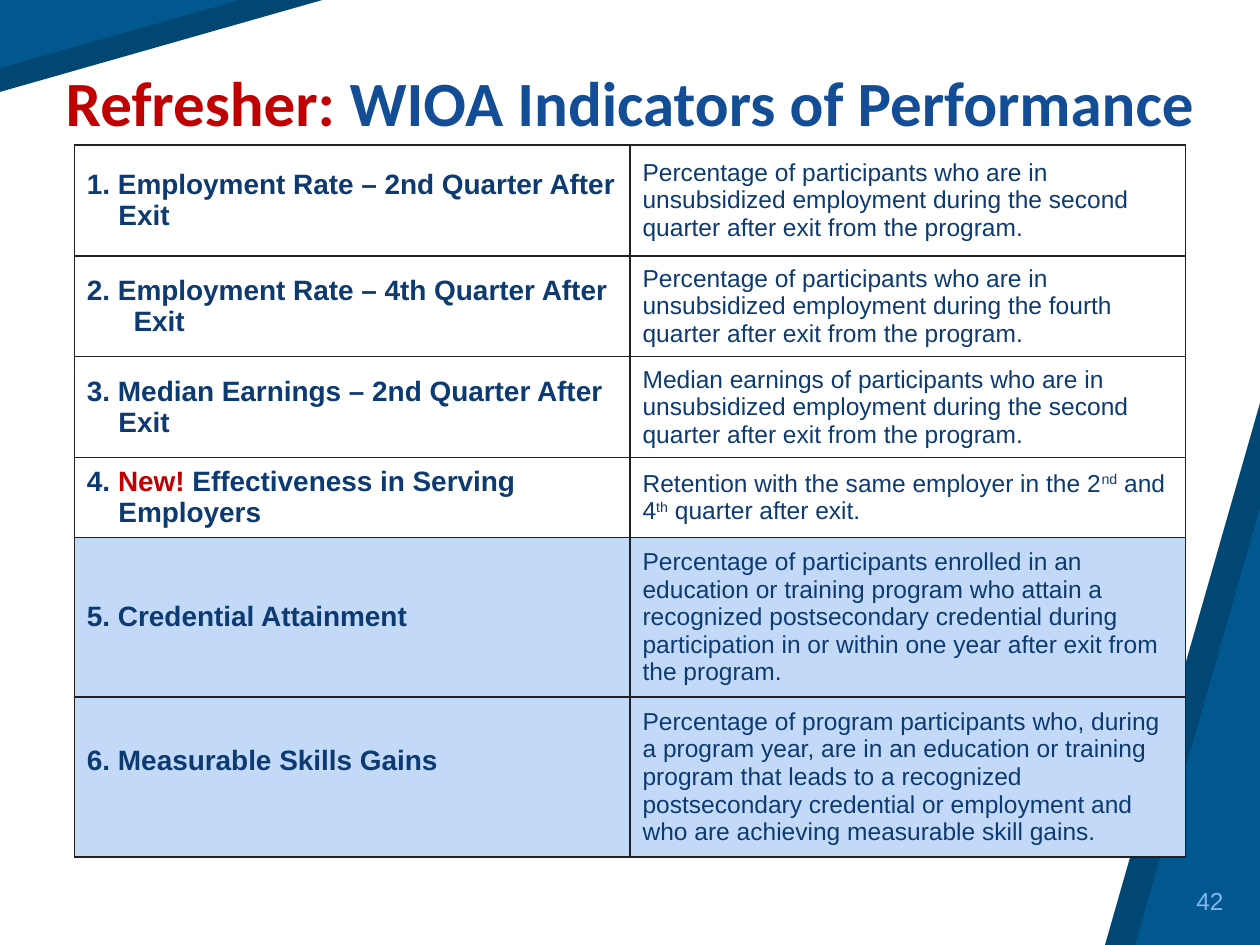
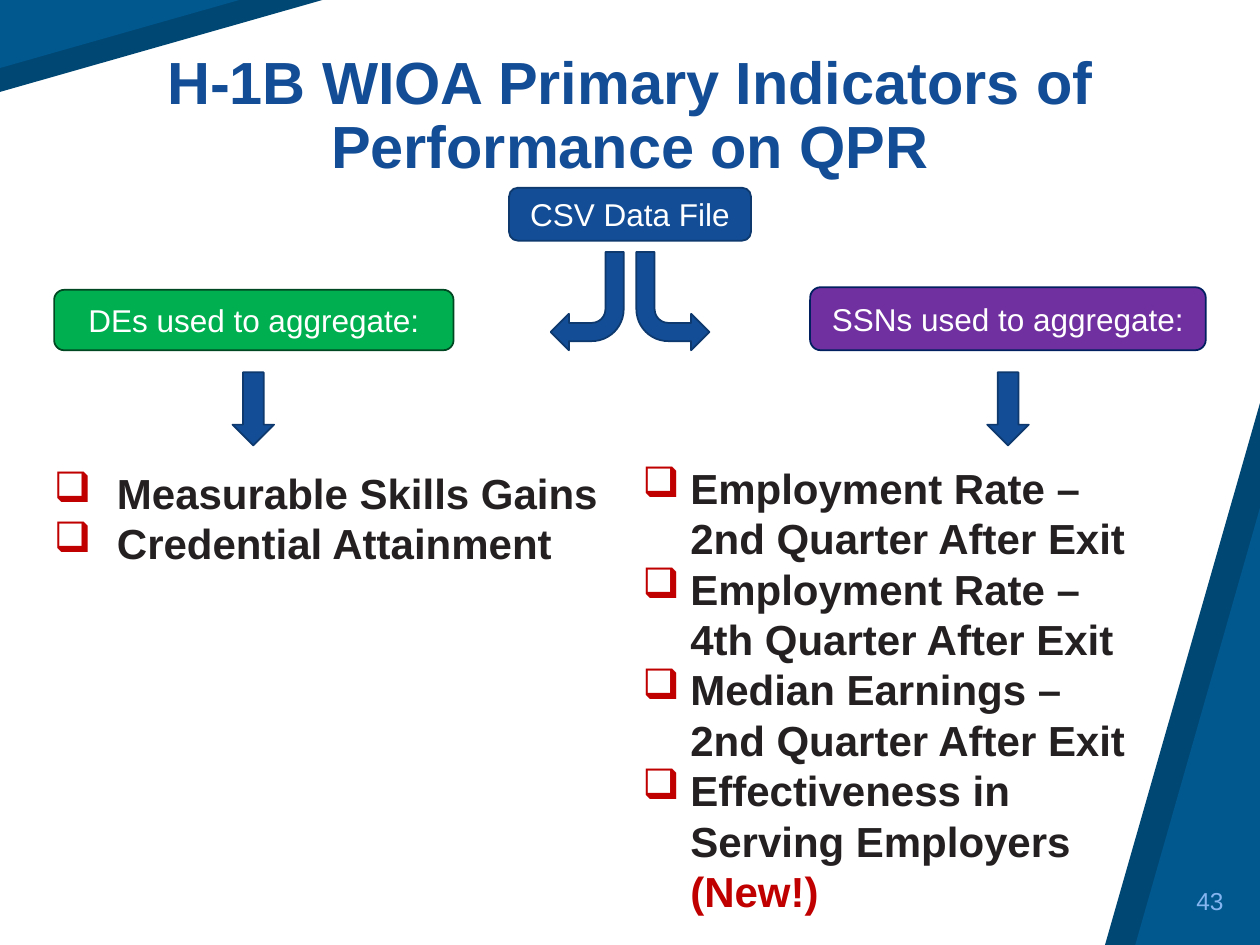
from dataclasses import dataclass
from typing import NamedTuple, Optional

from lxml.etree import SubElement
from pptx import Presentation
from pptx.dml.color import RGBColor
from pptx.enum.shapes import MSO_SHAPE as Preset
from pptx.enum.text import MSO_ANCHOR as Anchor, PP_ALIGN as Align
from pptx.oxml.ns import qn
from pptx.util import Inches, Pt

COLORS = {
    "navy_band": "004773",
    "blue_band": "00588F",
    "title": "124D95",
    "arrow_line": "0D396E",
    "table_text": "0D3A70",
    "red": "C00000",
    "ink": "242021",
    "highlight": "C2DAF8",
    "number": "85B5F0",
    "white": "FFFFFF",
    "purple": "7030A0",
    "purple_line": "002060",
    "green": "00B050",
    "green_line": "004821",
}


class Piece(NamedTuple):
    """Stretch of text; color None takes the color of its surroundings."""
    text: str
    color: Optional[str] = None
    superscript: bool = False


class Style(NamedTuple):
    size: float
    color: str
    bold: bool = False
    font: str = "Arial"


class Box(NamedTuple):
    left: float
    top: float
    width: float
    height: float

    def lengths(self) -> list:
        return [Inches(value) for value in self]


@dataclass
class Indicator:
    name: list
    definition: list
    height: float
    hanging: float = 0.25
    fill: Optional[str] = None
    bottom_margin: float = 0.05


@dataclass
class Label:
    text: str
    box: Box
    fill: str
    line: str


@dataclass
class Arrow:
    preset: Preset
    box: Box
    rotation: int
    flipped: bool = False


@dataclass
class BulletList:
    box: Box
    margin: float
    hanging: float
    items: list


LABEL = Style(18, "white")
INDICATOR_NAME = Style(16, "table_text", bold=True)
DEFINITION = Style(14, "table_text")
BULLET = Style(24, "ink", bold=True)
NUMBER = Style(14, "number")

# Corner bands: color, then the three points
BANDS = [
    ("navy_band", [(10, 3.2), (10, 7.5), (8.77, 7.5)]),
    ("blue_band", [(10, 4.03), (10, 7.5), (9.01, 7.5)]),
    ("navy_band", [(0, 0), (2.56, 0), (0, 0.73)]),
    ("blue_band", [(0, 0), (1.9, 0), (0, 0.54)]),
]

INDICATORS = [
    Indicator([Piece("1. Employment Rate – 2nd Quarter After Exit")],
              [Piece("Percentage of participants who are in unsubsidized employment "
                     "during the second quarter after exit from the program.")], 0.88),
    Indicator([Piece("2. Employment Rate – 4th Quarter After Exit")],
              [Piece("Percentage of participants who are in unsubsidized employment "
                     "during the fourth quarter after exit from the program.")], 0.75,
              hanging=0.37),
    Indicator([Piece("3. Median Earnings – 2nd Quarter After Exit")],
              [Piece("Median earnings of participants who are in unsubsidized employment "
                     "during the second quarter after exit from the program.")], 0.75),
    Indicator([Piece("4. "), Piece("New!", "red"),
               Piece(" Effectiveness in Serving Employers")],
              [Piece("Retention with the same employer in the 2"),
               Piece("nd", superscript=True), Piece(" and 4"),
               Piece("th", superscript=True), Piece(" quarter after exit.")], 0.59),
    Indicator([Piece("5. Credential Attainment")],
              [Piece("Percentage of participants enrolled in an education or training "
                     "program who attain a recognized postsecondary credential during "
                     "participation in or within one year after exit from the program.")],
              1.19, fill="highlight"),
    Indicator([Piece("6. Measurable Skills Gains")],
              [Piece("Percentage of program participants who, during a program year, are "
                     "in an education or training program that leads to a recognized "
                     "postsecondary credential or employment and who are achieving "
                     "measurable skill gains.")],
              1.19, fill="highlight", bottom_margin=0.3),
]

LABELS = [
    Label("CSV Data File", Box(4.04, 1.49, 1.92, 0.42), "title", "arrow_line"),
    Label("SSNs used to aggregate:", Box(6.43, 2.28, 3.14, 0.5), "purple", "purple_line"),
    Label("DEs used to aggregate:", Box(0.43, 2.3, 3.17, 0.48), "green", "green_line"),
]

ARROWS = [
    Arrow(Preset.RIGHT_ARROW, Box(7.71, 3.08, 0.58, 0.33), 90),
    Arrow(Preset.RIGHT_ARROW, Box(1.72, 3.08, 0.58, 0.33), 90),
    Arrow(Preset.BENT_ARROW, Box(5.05, 2, 0.58, 0.78), 180, flipped=True),
    Arrow(Preset.BENT_ARROW, Box(4.37, 2, 0.58, 0.78), 180),
]

BULLET_LISTS = [
    BulletList(Box(0.33, 3.66, 4.56, 0.91), 0.5, 0.5, [
        [Piece("Measurable Skills Gains")],
        [Piece("Credential Attainment")],
    ]),
    BulletList(Box(4.89, 3.62, 4.25, 3.74), 0.49, 0.38, [
        [Piece("Employment Rate – 2nd Quarter After Exit")],
        [Piece("Employment Rate – 4th Quarter After Exit")],
        [Piece("Median Earnings – 2nd Quarter After Exit")],
        [Piece("Effectiveness in Serving Employers "), Piece("(New!)", "red")],
    ]),
]


def rgb(name: str) -> RGBColor:
    return RGBColor.from_string(COLORS[name])


def write(paragraph, pieces: list, style: Style) -> None:
    for piece in pieces:
        run = paragraph.add_run()
        run.text = piece.text
        run.font.name = style.font
        run.font.size = Pt(style.size)
        run.font.bold = style.bold
        run.font.color.rgb = rgb(piece.color or style.color)
        if piece.superscript:
            run._r.get_or_add_rPr().set("baseline", "30000")


def hang(paragraph, margin: float, hanging: float) -> None:
    properties = paragraph._p.get_or_add_pPr()
    properties.set("marL", str(Inches(margin)))
    properties.set("indent", str(-Inches(hanging)))


def add_bullet(paragraph) -> None:
    properties = paragraph._p.get_or_add_pPr()
    color = SubElement(properties, qn("a:buClr"))
    SubElement(color, qn("a:srgbClr"), val=COLORS["red"])
    SubElement(properties, qn("a:buChar"), char="❑")


def add_text_box(slide, box: Box, anchor: Anchor):
    text_frame = slide.shapes.add_textbox(*box.lengths()).text_frame
    text_frame.word_wrap = True
    text_frame.vertical_anchor = anchor
    return text_frame


def paint(shape, fill: str, line: Optional[str] = None) -> None:
    shape.shadow.inherit = False
    shape.fill.solid()
    shape.fill.fore_color.rgb = rgb(fill)
    if line:
        shape.line.color.rgb = rgb(line)
        shape.line.width = Pt(1)
    else:
        shape.line.fill.background()


def add_base_slide(presentation, number: int, title: list, title_style: Style,
                   title_box: Box):
    """Add a slide with corner bands, title and slide number."""
    slide = presentation.slides.add_slide(presentation.slide_layouts[6])
    for color, points in BANDS:
        corners = [(Inches(x), Inches(y)) for x, y in points]
        builder = slide.shapes.build_freeform(*corners[0])
        builder.add_line_segments(corners[1:], close=True)
        paint(builder.convert_to_shape(), color)

    paragraph = add_text_box(slide, title_box, Anchor.BOTTOM).paragraphs[0]
    paragraph.alignment = Align.CENTER
    paragraph.line_spacing = 0.9
    write(paragraph, title, title_style)

    paragraph = add_text_box(slide, Box(8.41, 6.95, 1.4, 0.4), Anchor.MIDDLE).paragraphs[0]
    paragraph.alignment = Align.RIGHT
    write(paragraph, [Piece(str(number))], NUMBER)
    return slide


def format_cell(cell, fill: Optional[str]) -> None:
    """Set the borders, then the fill, of a table cell."""
    cell.vertical_anchor = Anchor.MIDDLE
    properties = cell._tc.get_or_add_tcPr()
    for side in ("lnL", "lnR", "lnT", "lnB"):
        border = SubElement(properties, qn(f"a:{side}"), w=str(Pt(1)))
        solid = SubElement(border, qn("a:solidFill"))
        SubElement(solid, qn("a:srgbClr"), val=COLORS["ink"])
    if fill:
        cell.fill.solid()
        cell.fill.fore_color.rgb = rgb(fill)
    else:
        cell.fill.background()


def add_indicator_table(slide) -> None:
    box = Box(0.59, 1.15, 8.82, sum(item.height for item in INDICATORS))
    table = slide.shapes.add_table(len(INDICATORS), 2, *box.lengths()).table
    table.first_row = False
    table.horz_banding = False
    for row, indicator in enumerate(INDICATORS):
        table.rows[row].height = Inches(indicator.height)
        name, definition = table.cell(row, 0), table.cell(row, 1)
        for cell in (name, definition):
            format_cell(cell, indicator.fill)
        name.margin_bottom = Inches(indicator.bottom_margin)
        paragraph = name.text_frame.paragraphs[0]
        hang(paragraph, indicator.hanging, indicator.hanging)
        write(paragraph, indicator.name, INDICATOR_NAME)
        write(definition.text_frame.paragraphs[0], indicator.definition, DEFINITION)


def add_label(slide, label: Label) -> None:
    shape = slide.shapes.add_shape(Preset.ROUNDED_RECTANGLE, *label.box.lengths())
    paint(shape, label.fill, label.line)
    shape.text_frame.vertical_anchor = Anchor.MIDDLE
    paragraph = shape.text_frame.paragraphs[0]
    paragraph.alignment = Align.CENTER
    write(paragraph, [Piece(label.text)], LABEL)


def add_arrow(slide, arrow: Arrow) -> None:
    shape = slide.shapes.add_shape(arrow.preset, *arrow.box.lengths())
    paint(shape, "title", "arrow_line")
    shape.rotation = arrow.rotation
    if arrow.flipped:
        shape._element.spPr.find(qn("a:xfrm")).set("flipH", "1")


def add_bullet_list(slide, bullet_list: BulletList) -> None:
    text_frame = add_text_box(slide, bullet_list.box, Anchor.TOP)
    for index, item in enumerate(bullet_list.items):
        paragraph = text_frame.add_paragraph() if index else text_frame.paragraphs[0]
        add_bullet(paragraph)
        hang(paragraph, bullet_list.margin, bullet_list.hanging)
        paragraph.line_spacing = Pt(28.8)
        write(paragraph, item, BULLET)


def main() -> None:
    presentation = Presentation()
    presentation.slide_width = Inches(10)
    presentation.slide_height = Inches(7.5)

    slide = add_base_slide(
        presentation, 42,
        [Piece("Refresher: ", "red"), Piece("WIOA Indicators of Performance")],
        Style(36, "title", bold=True, font="Calibri"), Box(0, 0.01, 10, 1.15))
    add_indicator_table(slide)

    slide = add_base_slide(
        presentation, 43, [Piece("H-1B WIOA Primary Indicators of Performance on QPR")],
        Style(34, "title", bold=True), Box(0, 0, 10, 1.49))
    for bullet_list in BULLET_LISTS:
        add_bullet_list(slide, bullet_list)
    for label in LABELS:
        add_label(slide, label)
    for arrow in ARROWS:
        add_arrow(slide, arrow)

    presentation.save("out.pptx")


if __name__ == "__main__":
    main()
